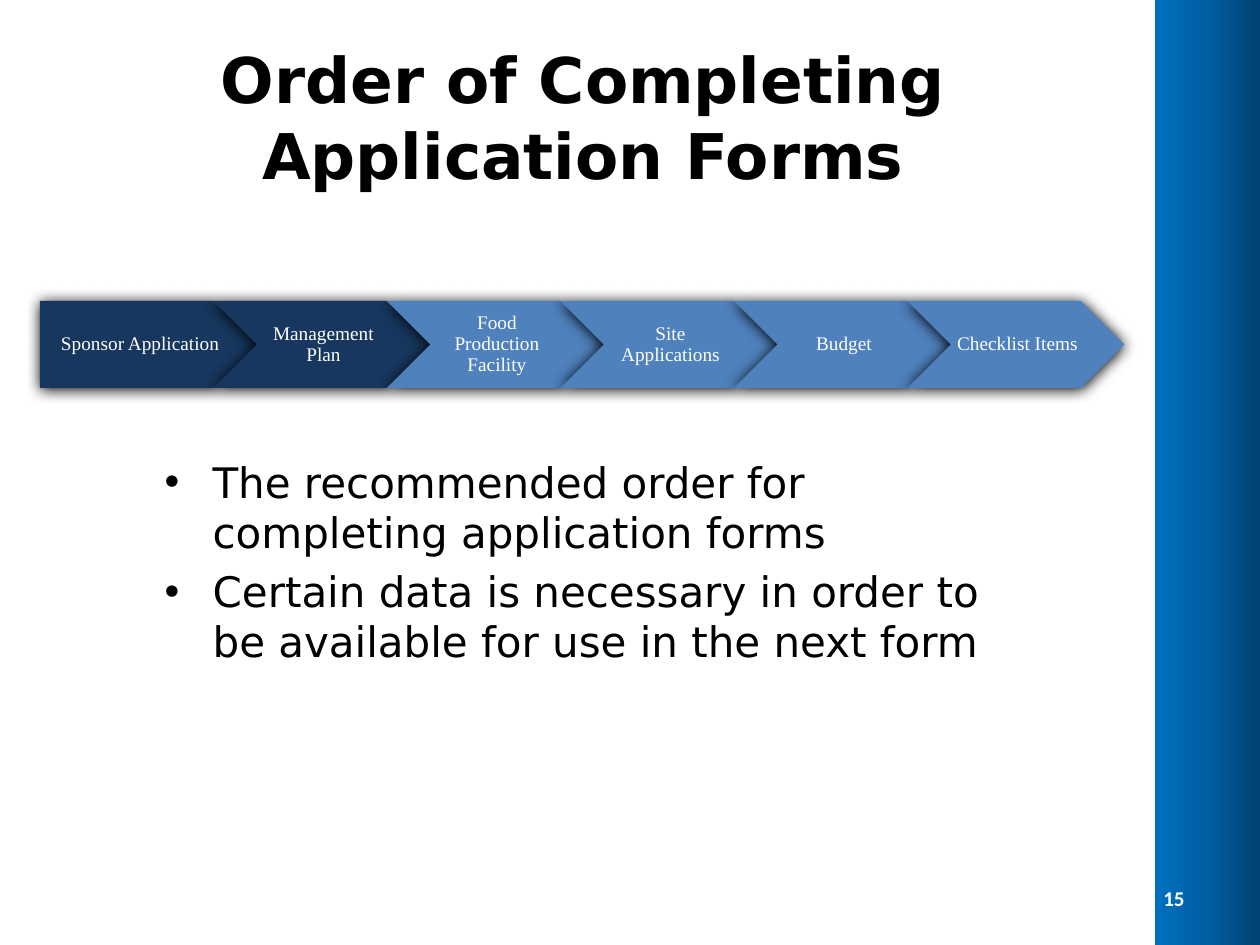
from lxml.etree import SubElement
from copy import deepcopy
from pptx import Presentation
from pptx.dml.color import RGBColor
from pptx.enum.shapes import MSO_SHAPE as Shape
from pptx.enum.text import MSO_ANCHOR as Anchor, MSO_AUTO_SIZE as AutoSize, PP_ALIGN as Align
from pptx.oxml.ns import qn
from pptx.util import Pt

# Content
TITLE = "Order of Completing Application Forms"
BULLETS = [
    "The recommended order for completing application forms",
    "Certain data is necessary in order to be available for use in the next form",
]
STEPS = ["Sponsor Application", "Management Plan", "Food Production Facility",
         "Site Applications", "Budget", "Checklist Items"]
HIGHLIGHTED_STEPS = 2
PAGE_NUMBER = "15"

# Style
BLACK = RGBColor(0x00, 0x00, 0x00)
WHITE = RGBColor(0xFF, 0xFF, 0xFF)
NAVY = RGBColor(0x17, 0x37, 0x5E)
BLUE = RGBColor(0x4F, 0x81, 0xBD)
BAND_STOPS = [(0, RGBColor(0x00, 0x70, 0xC0)), (0.5, RGBColor(0x00, 0x5E, 0xA2)),
              (1, RGBColor(0x00, 0x42, 0x72))]
HEADING_FONT, STEP_FONT, NUMBER_FONT = "DejaVu Sans", "Times New Roman", "Calibri"

# Geometry in px, 126 to the inch
EMU_PER_PX = 914400 / 126
SLIDE_WIDTH, SLIDE_HEIGHT = 1260, 945
BAND_LEFT = 1155
STEP_LEFT, STEP_TOP, STEP_WIDTH, STEP_HEIGHT = 40, 301, 217, 87
STEP_PITCH = STEP_WIDTH - STEP_HEIGHT / 2  # each tip fills the next notch
BULLET_INDENT = 48


def px(length):
    return round(length * EMU_PER_PX)


def place(shape, left, top, width, height):
    shape.left, shape.top, shape.width, shape.height = map(px, (left, top, width, height))


def write(paragraph, text, *, font, size, color, bold=False, align=Align.LEFT,
          before=0, line_spacing=1.0):
    paragraph.text = text
    paragraph.alignment = align
    paragraph.space_before = Pt(before)
    paragraph.line_spacing = line_spacing
    paragraph.font.name = font
    paragraph.font.size = Pt(size)
    paragraph.font.bold = bold
    paragraph.font.color.rgb = color


def add_bullet(paragraph):
    properties = paragraph._p.get_or_add_pPr()
    properties.set("marL", str(px(BULLET_INDENT)))
    properties.set("indent", str(-px(BULLET_INDENT)))
    SubElement(properties, qn("a:buChar"), char="•")


def add_shadow(shape):
    shape.shadow.inherit = False
    effects = shape._element.spPr.find(qn("a:effectLst"))
    shadow = SubElement(effects, qn("a:outerShdw"), blurRad=str(Pt(8.5)),
                        dist=str(Pt(1)), dir="5400000", rotWithShape="0")
    SubElement(shadow, qn("a:srgbClr"), val=str(BLACK))


def add_band(slide):
    band = slide.shapes.add_shape(Shape.RECTANGLE, 0, 0, 0, 0)
    place(band, BAND_LEFT, 0, SLIDE_WIDTH - BAND_LEFT, SLIDE_HEIGHT)
    band.shadow.inherit = False
    band.line.fill.background()
    band.fill.gradient()
    band.fill.gradient_angle = 0
    stop_list = next(band._element.spPr.iter(qn("a:gsLst")))
    stop_list.append(deepcopy(stop_list[0]))
    for stop, (position, color) in zip(band.fill.gradient_stops, BAND_STOPS):
        stop.position = position
        stop.color.rgb = color


def add_step(slide, index, label):
    kind = Shape.CHEVRON if index else Shape.PENTAGON
    step = slide.shapes.add_shape(kind, 0, 0, 0, 0)
    place(step, STEP_LEFT + index * STEP_PITCH, STEP_TOP, STEP_WIDTH, STEP_HEIGHT)
    step.fill.solid()
    step.fill.fore_color.rgb = NAVY if index < HIGHLIGHTED_STEPS else BLUE
    step.line.fill.background()
    add_shadow(step)
    frame = step.text_frame
    frame.word_wrap = True
    frame.vertical_anchor = Anchor.MIDDLE
    frame.margin_left = px(6 if index else 8)
    frame.margin_right = px(3)
    frame.margin_top = frame.margin_bottom = px(4)
    write(frame.paragraphs[0], label, font=STEP_FONT, size=11, color=WHITE,
          align=Align.CENTER, line_spacing=0.9)


def main():
    presentation = Presentation()
    presentation.slide_width, presentation.slide_height = px(SLIDE_WIDTH), px(SLIDE_HEIGHT)
    slide = presentation.slides.add_slide(presentation.slide_layouts[1])

    # Side band
    add_band(slide)

    # Title
    title = slide.shapes.title
    place(title, 63, 38, 1040, 157)
    title.text_frame.auto_size = AutoSize.NONE
    title.text_frame.vertical_anchor = Anchor.MIDDLE
    write(title.text_frame.paragraphs[0], TITLE, font=HEADING_FONT, size=36,
          color=BLACK, bold=True, align=Align.CENTER)

    # Process chain
    for index, label in enumerate(STEPS):
        add_step(slide, index, label)

    # Bullet list
    body = slide.placeholders[1]
    place(body, 152, 450, 851, 292)
    frame = body.text_frame
    frame.auto_size = AutoSize.NONE
    for index, text in enumerate(BULLETS):
        paragraph = frame.add_paragraph() if index else frame.paragraphs[0]
        add_bullet(paragraph)
        write(paragraph, text, font=HEADING_FONT, size=24, color=BLACK,
              before=4.8 if index else 0)

    # Page number
    number = slide.shapes.add_textbox(0, 0, 0, 0)
    place(number, 1144, 873, 53, 50)
    number.text_frame.word_wrap = True
    number.text_frame.vertical_anchor = Anchor.MIDDLE
    write(number.text_frame.paragraphs[0], PAGE_NUMBER, font=NUMBER_FONT, size=12,
          color=WHITE, bold=True, align=Align.RIGHT)

    presentation.save("out.pptx")


if __name__ == "__main__":
    main()
